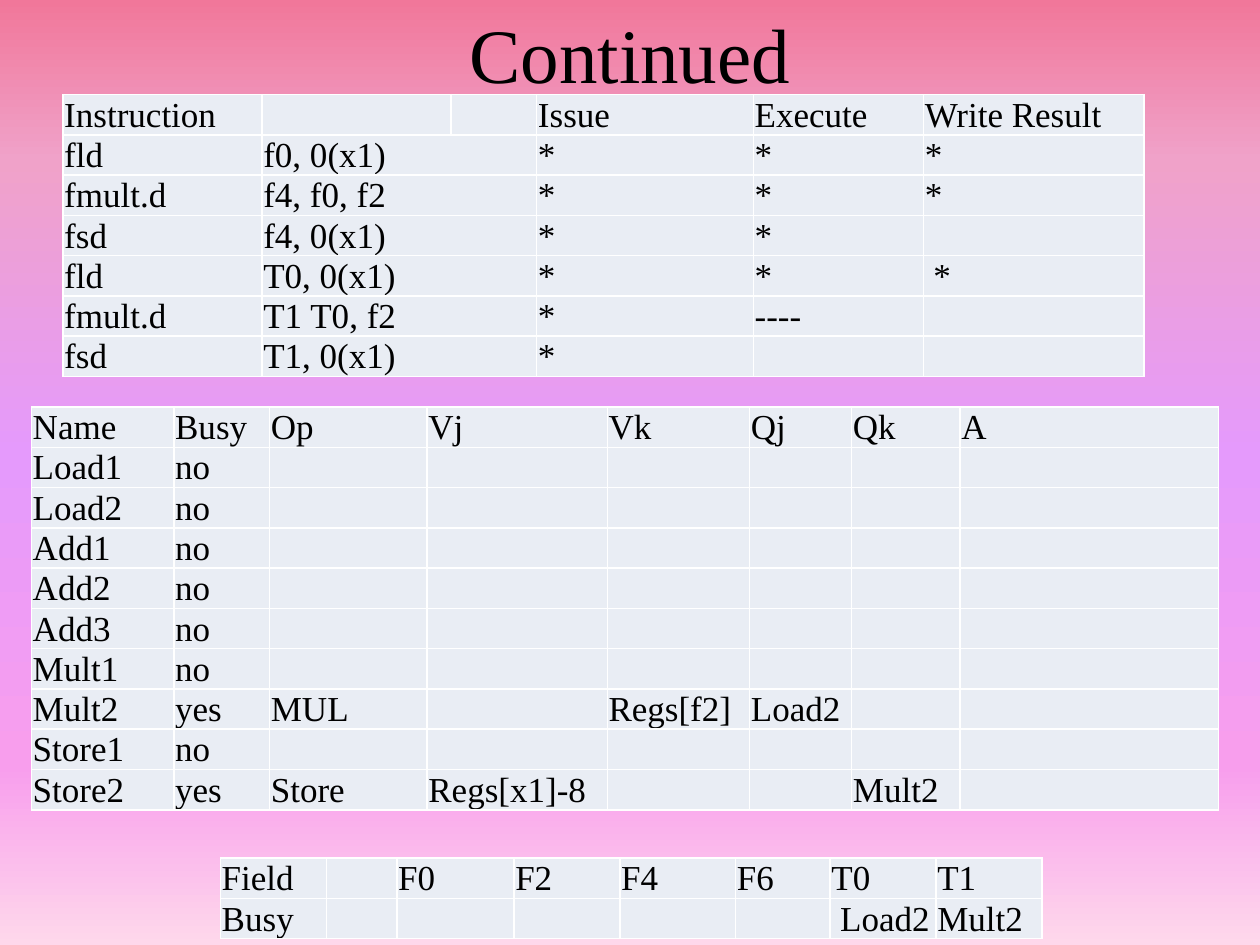
"""Build a slide of instruction status, reservation stations and register status tables."""
from lxml.etree import SubElement
from pptx import Presentation
from pptx.dml.color import RGBColor
from pptx.enum.text import MSO_ANCHOR, PP_ALIGN
from pptx.oxml.ns import qn
from pptx.util import Inches, Pt

COLORS = {"text": "000000", "cell": "E9EDF4", "border": "FFFFFF"}
GRADIENT = {0: "F1779A", 17: "F0A2C9", 48: "E59AFC", 81: "F89EED", 100: "FED8EB"}
FONT = "Times New Roman"
ROW_HEIGHT = 0.32

INSTRUCTIONS = [
    ["Instruction", "", "", "Issue", "Execute", "Write Result"],
    ["fld", "f0, 0(x1)", "", "*", "*", "*"],
    ["fmult.d", "f4, f0, f2", "", "*", "*", "*"],
    ["fsd", "f4, 0(x1)", "", "*", "*", ""],
    ["fld", "T0, 0(x1)", "", "*", "*", " *"],
    ["fmult.d", "T1 T0, f2", "", "*", "----", ""],
    ["fsd", "T1, 0(x1)", "", "*", "", ""],
]
IDLE = [""] * 6
STATIONS = [
    ["Name", "Busy", "Op", "Vj", "Vk", "Qj", "Qk", "A"],
    *[[name, "no", *IDLE] for name in ("Load1", "Load2", "Add1", "Add2", "Add3", "Mult1")],
    ["Mult2", "yes", "MUL", "", "Regs[f2]", "Load2", "", ""],
    ["Store1", "no", *IDLE],
    ["Store2", "yes", "Store", "Regs[x1]-8", "", "", "Mult2", ""],
]
REGISTERS = [
    ["Field", "", "F0", "F2", "F4", "F6", "T0", "T1"],
    ["Busy", "", "", "", "", "", " Load2", "Mult2"],
]


def set_font(paragraph, size):
    paragraph.font.name = FONT
    paragraph.font.size = Pt(size)
    paragraph.font.color.rgb = RGBColor.from_string(COLORS["text"])


def add_status_table(slide, left, top, widths, rows):
    table = slide.shapes.add_table(
        len(rows), len(widths), Inches(left), Inches(top),
        Inches(sum(widths)), Inches(ROW_HEIGHT * len(rows))).table
    table.first_row = False
    table.horz_banding = False
    for column, width in zip(table.columns, widths):
        column.width = Inches(width)
    for row_index, row in enumerate(rows):
        for column_index, text in enumerate(row):
            cell = table.cell(row_index, column_index)
            cell.text = text
            cell.vertical_anchor = MSO_ANCHOR.BOTTOM
            cell.margin_left = cell.margin_right = Inches(0.01)
            cell.margin_top = cell.margin_bottom = 0
            set_font(cell.text_frame.paragraphs[0], 20)
            properties = cell._tc.get_or_add_tcPr()
            for side in ("a:lnL", "a:lnR", "a:lnT", "a:lnB"):
                line = SubElement(properties, qn(side), w=str(Pt(1)))
                line_fill = SubElement(line, qn("a:solidFill"))
                SubElement(line_fill, qn("a:srgbClr"), val=COLORS["border"])
            cell.fill.solid()
            cell.fill.fore_color.rgb = RGBColor.from_string(COLORS["cell"])
    return table


presentation = Presentation()
presentation.slide_width = Inches(10)
presentation.slide_height = Inches(7.5)
slide = presentation.slides.add_slide(presentation.slide_layouts[5])

background = slide.background.fill
background.gradient()
background.gradient_angle = 270
stops = next(slide.element.iter(qn("a:gsLst")))
for stop in list(stops):
    stops.remove(stop)
for position, color in GRADIENT.items():
    stop = SubElement(stops, qn("a:gs"), pos=str(position * 1000))
    SubElement(stop, qn("a:srgbClr"), val=color)

title = slide.shapes.title
title.left, title.top = Inches(0.5), Inches(-0.08)
title.width, title.height = Inches(9), Inches(1.25)
title.text_frame.text = "Continued"
title.text_frame.vertical_anchor = MSO_ANCHOR.TOP
title.text_frame.margin_top = Inches(0.13)
heading = title.text_frame.paragraphs[0]
heading.alignment = PP_ALIGN.CENTER
set_font(heading, 44)

instruction_table = add_status_table(
    slide, 0.5, 0.75, [1.58, 1.5, 0.68, 1.72, 1.35, 1.75], INSTRUCTIONS)
for row_index in range(1, len(INSTRUCTIONS)):
    instruction_table.cell(row_index, 1).merge(instruction_table.cell(row_index, 2))
add_status_table(
    slide, 0.25, 3.23, [1.13, 0.76, 1.25, 1.43, 1.13, 0.81, 0.86, 2.05], STATIONS)
add_status_table(
    slide, 1.75, 6.81, [0.84, 0.56, 0.93, 0.84, 0.92, 0.75, 0.84, 0.84], REGISTERS)

presentation.save("out.pptx")
